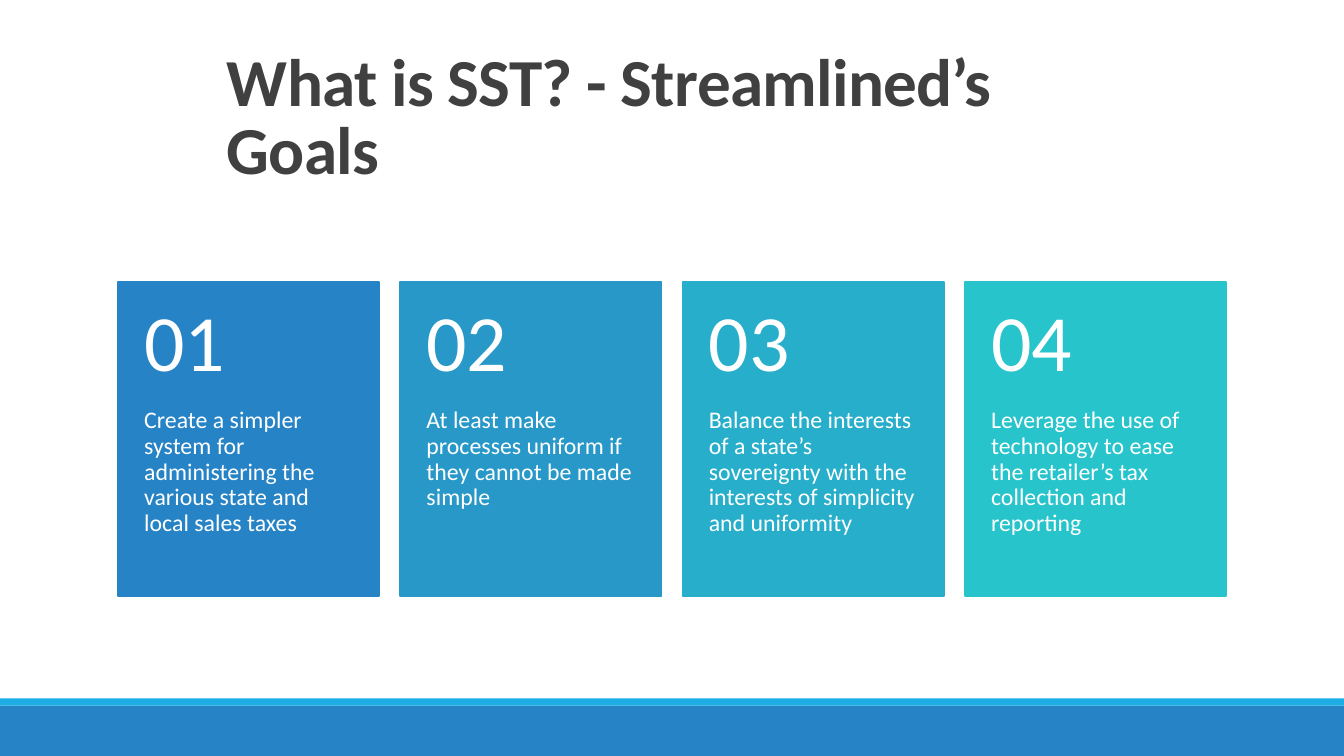
from pptx import Presentation
from pptx.dml.color import RGBColor
from pptx.enum.shapes import MSO_SHAPE
from pptx.enum.text import MSO_ANCHOR, MSO_AUTO_SIZE, PP_ALIGN
from pptx.util import Inches, Pt

RECTANGLE = MSO_SHAPE.RECTANGLE
TOP, MIDDLE, BOTTOM = MSO_ANCHOR.TOP, MSO_ANCHOR.MIDDLE, MSO_ANCHOR.BOTTOM
LEFT = PP_ALIGN.LEFT
NO_AUTOFIT = MSO_AUTO_SIZE.NONE

WHITE = RGBColor(0xFF, 0xFF, 0xFF)
CHARCOAL = RGBColor(0x40, 0x40, 0x40)
BLUE = RGBColor(0x26, 0x83, 0xC6)
SKY = RGBColor(0x1C, 0xAD, 0xE4)
OCEAN = RGBColor(0x27, 0x98, 0xC8)
LAGOON = RGBColor(0x27, 0xAE, 0xCA)
TURQUOISE = RGBColor(0x28, 0xC4, 0xCC)

SLIDE_W, SLIDE_H = 13.33, 7.5
CARD_LEFT, CARD_TOP, CARD_W, CARD_H = 1.17, 2.8, 2.59, 3.11
CARD_PITCH = 2.8
NUMBER_H = 1.25
SIDE_INSET = 0.26

GOALS = [
    (BLUE, "Create a simpler system for administering the various state "
           "and local sales taxes"),
    (OCEAN, "At least make processes uniform if they cannot be made simple"),
    (LAGOON, "Balance the interests of a state’s sovereignty with the "
             "interests of simplicity and uniformity"),
    (TURQUOISE, "Leverage the use of technology to ease the retailer’s tax "
                "collection and reporting"),
]


def add_block(left, top, width, height, color):
    block = slide.shapes.add_shape(RECTANGLE, Inches(left), Inches(top),
                                   Inches(width), Inches(height))
    block.shadow.inherit = False
    block.fill.solid()
    block.fill.fore_color.rgb = color
    block.line.fill.background()
    return block


def write(frame, text, size, color, spacing, anchor):
    frame.text = text
    frame.word_wrap = True
    frame.auto_size = NO_AUTOFIT
    frame.vertical_anchor = anchor
    paragraph = frame.paragraphs[0]
    paragraph.alignment = LEFT
    paragraph.line_spacing = spacing
    paragraph.space_before = Pt(0)
    font = paragraph.runs[0].font
    font.name, font.size = "Calibri", Pt(size)
    font.color.rgb = color
    return font


prs = Presentation()
prs.slide_width, prs.slide_height = Inches(SLIDE_W), Inches(SLIDE_H)
slide = prs.slides.add_slide(prs.slide_layouts[5])

# Footer bands
add_block(0, 7, SLIDE_W, 0.5, BLUE)
add_block(0, 6.93, SLIDE_W, 0.07, SKY)

# Title
title = slide.shapes.title
title.left, title.top = Inches(2.15), Inches(0.33)
title.width, title.height = Inches(9.03), Inches(1.59)
title_font = write(title.text_frame, "What is SST? - Streamlined’s Goals",
                   48, CHARCOAL, 0.85, BOTTOM)
title_font.bold = True
title.text_frame.paragraphs[0].runs[0]._r.get_or_add_rPr().set("spc", "-50")

# Numbered goal cards
for index, (color, goal) in enumerate(GOALS):
    left = CARD_LEFT + index * CARD_PITCH
    card = add_block(left, CARD_TOP, CARD_W, CARD_H, color)
    card.line.color.rgb = color
    card.line.width = Pt(1.25)

    # Goal text below, number above: top, height, insets, text, size, anchor
    for top, height, inset_top, inset_bottom, text, size, anchor in (
        (CARD_TOP + NUMBER_H, CARD_H - NUMBER_H, 0, 0.36, goal, 17, TOP),
        (CARD_TOP, NUMBER_H, 0.18, 0.18, f"{index + 1:02}", 57, MIDDLE),
    ):
        label = slide.shapes.add_textbox(Inches(left), Inches(top),
                                         Inches(CARD_W), Inches(height))
        frame = label.text_frame
        frame.margin_left = frame.margin_right = Inches(SIDE_INSET)
        frame.margin_top = Inches(inset_top)
        frame.margin_bottom = Inches(inset_bottom)
        write(frame, text, size, WHITE, 0.9, anchor)

prs.save("out.pptx")
